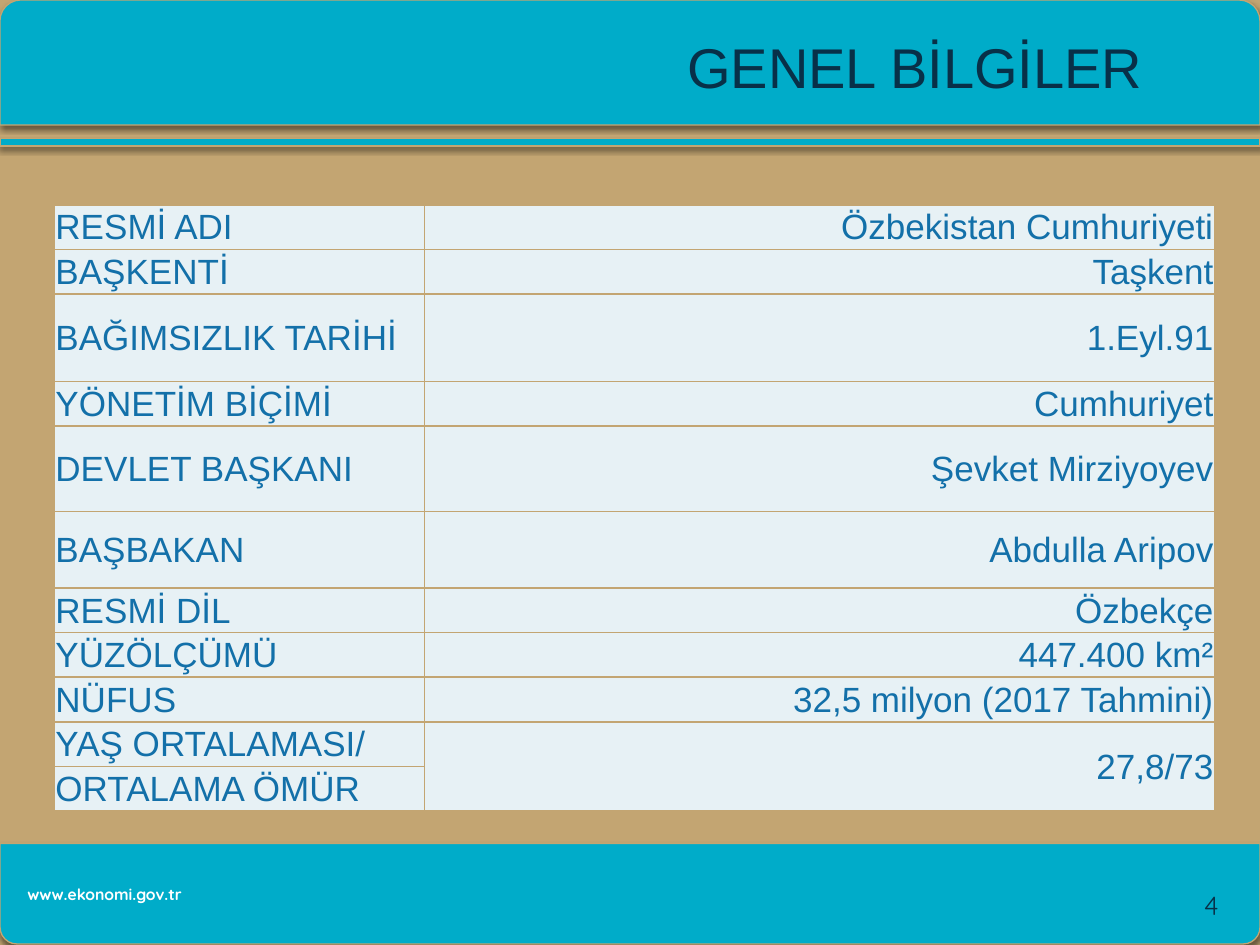
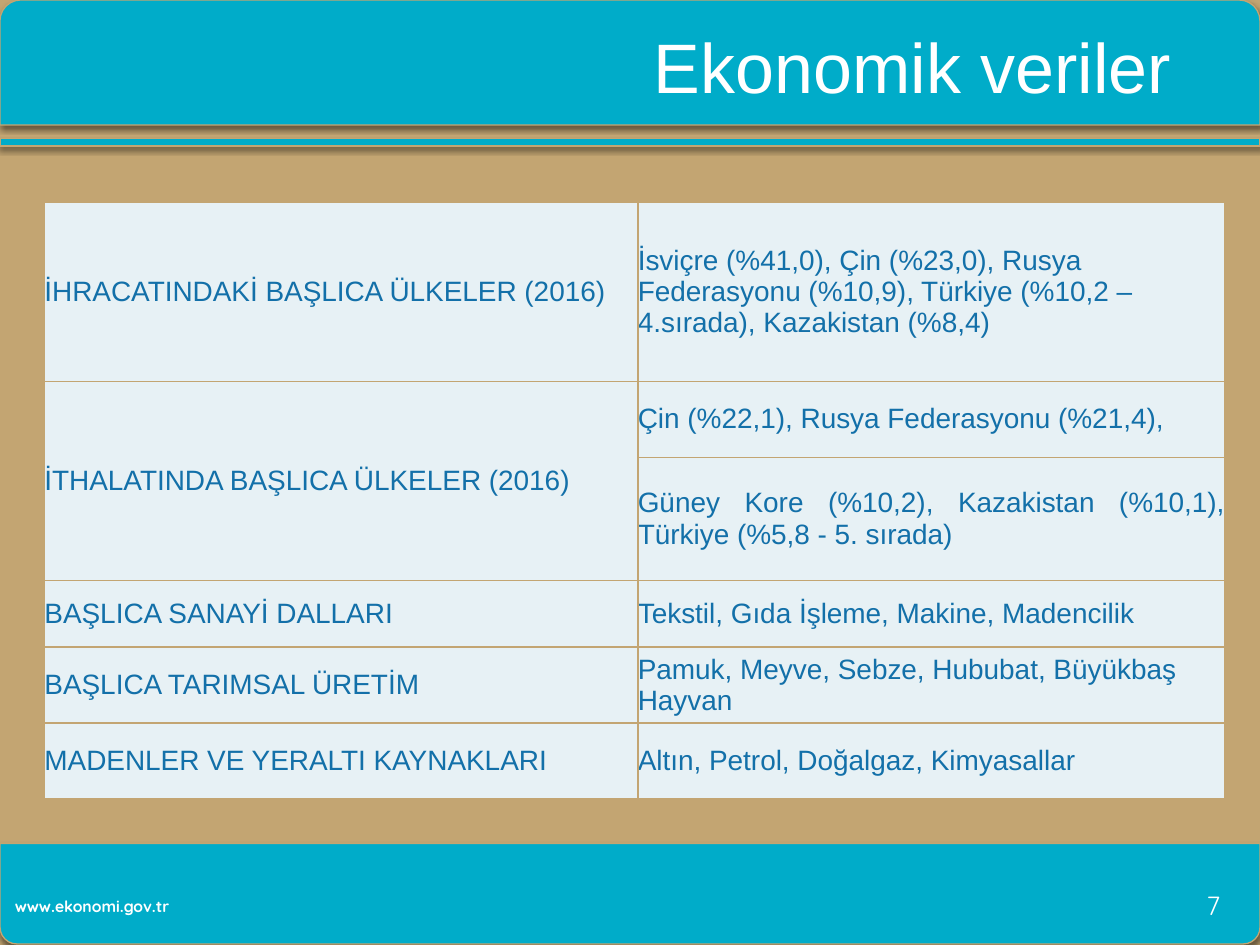
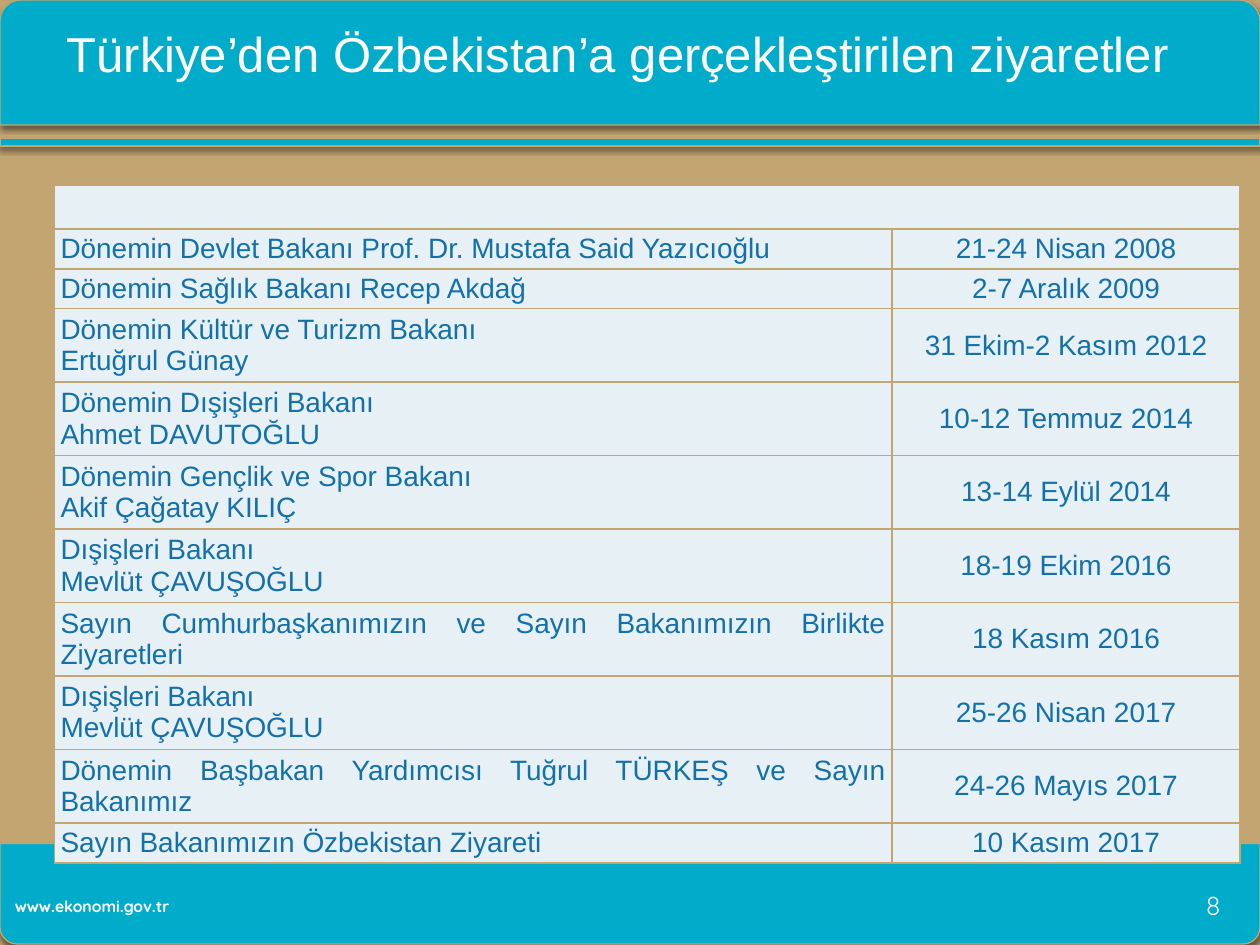
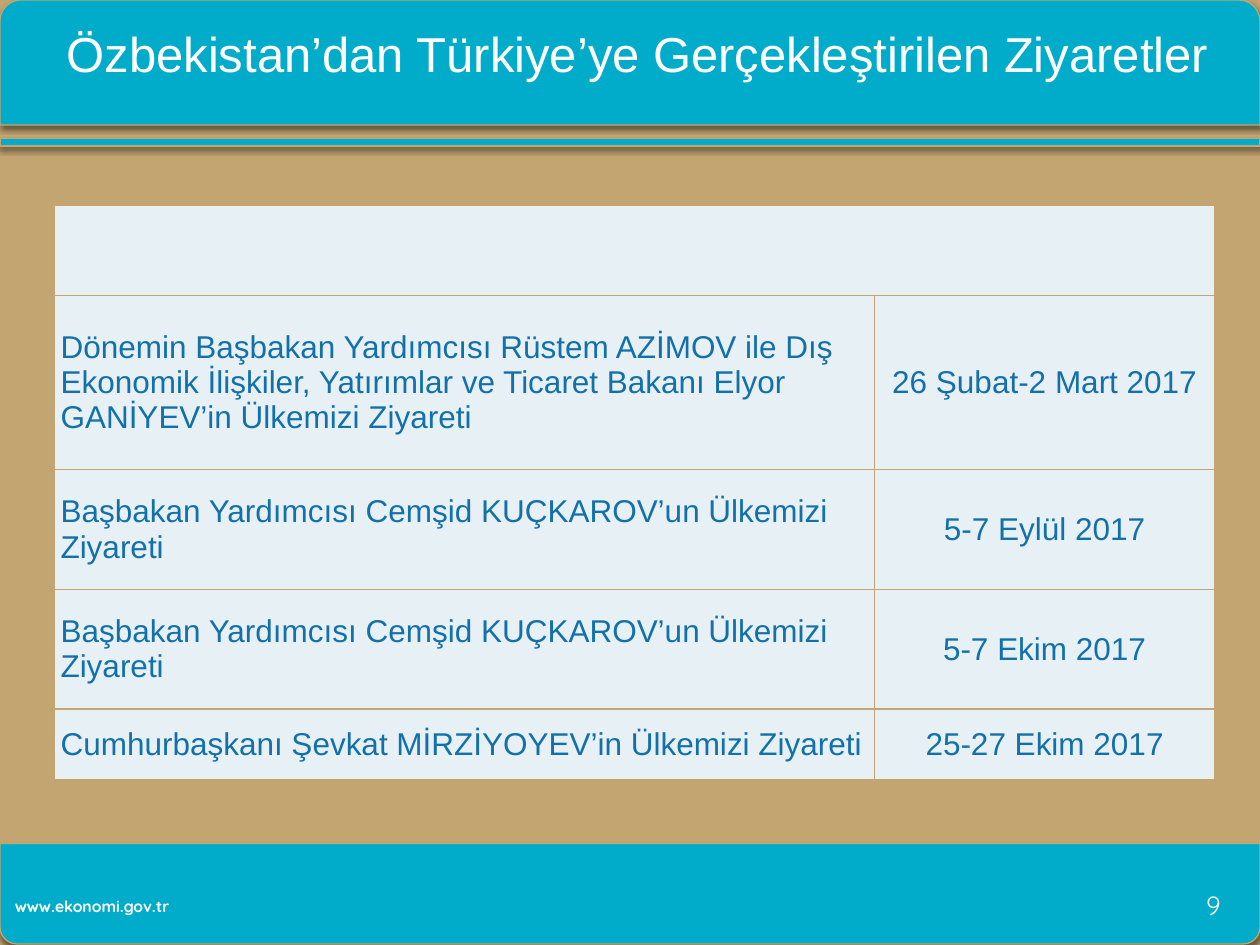
from dataclasses import dataclass, field
from typing import NamedTuple

from pptx import Presentation
from pptx.dml.color import RGBColor
from pptx.enum.shapes import MSO_SHAPE
from pptx.enum.text import MSO_ANCHOR, MSO_AUTO_SIZE, PP_ALIGN
from pptx.oxml.ns import qn
from pptx.oxml.xmlchemy import OxmlElement
from pptx.util import Pt

LEFT, CENTER, RIGHT, JUSTIFY = PP_ALIGN.LEFT, PP_ALIGN.CENTER, PP_ALIGN.RIGHT, PP_ALIGN.JUSTIFY
TOP, MIDDLE = MSO_ANCHOR.TOP, MSO_ANCHOR.MIDDLE
ROUNDED_TOP, RECTANGLE = MSO_SHAPE.ROUND_2_SAME_RECTANGLE, MSO_SHAPE.RECTANGLE
GROW_TO_TEXT = MSO_AUTO_SIZE.SHAPE_TO_FIT_TEXT

COLORS = {
    "sand": "C3A572",
    "turquoise": "00ACC9",
    "navy": "083048",
    "white": "FFFFFF",
    "cell": "E7F1F5",
    "blue": "1370A9",
    "shadow": "000000",
}
BODY_FONT, FOOTER_FONT = "Arial", "Quicksand"
WEBSITE = "www.ekonomi.gov.tr"


class Area(NamedTuple):
    left: float
    top: float
    width: float
    height: float


class Insets(NamedTuple):
    left: float
    top: float
    right: float
    bottom: float


class Band(NamedTuple):
    preset: int
    area: Area
    rotation: int = 0


class Title(NamedTuple):
    text: str
    area: Area
    size: float
    color: str = "white"
    align: int = LEFT


class Merge(NamedTuple):
    first: tuple[int, int]
    last: tuple[int, int]


@dataclass(frozen=True)
class Grid:
    left: float
    top: float
    widths: list[float]
    heights: list[float]
    size: float
    aligns: tuple[int, int]
    merge: Merge
    rows: list[tuple[str, str]]
    insets: Insets = Insets(3.6, 1.8, 3.6, 1.8)
    exceptions: dict[tuple[int, int], int] = field(default_factory=dict)


@dataclass(frozen=True)
class PageContent:
    number: str
    title: Title
    grid: Grid
    number_color: str = "white"
    number_area: Area = Area(677.5, 499, 31.7, 36.7)
    website_area: Area = Area(1.4, 506.2, 228.2, 23.8)


BANDS = [
    Band(ROUNDED_TOP, Area(0, 481.9, 720, 57.5), 180),
    Band(ROUNDED_TOP, Area(0, 0, 720, 71.4)),
    Band(RECTANGLE, Area(0, 79.3, 720, 4.2)),
]
VISITS_TITLE_AREA = Area(31, 10.1, 677.5, 41)
HEADER_MERGE = Merge((0, 0), (0, 1))

PAGES = [
    PageContent(
        number="4",
        number_color="navy",
        number_area=Area(675.4, 499, 33.8, 36.7),
        website_area=Area(8.6, 499, 228.2, 23.8),
        title=Title("GENEL BİLGİLER", Area(23.8, 15.1, 636.5, 46), 32, "navy", RIGHT),
        grid=Grid(
            left=31, top=117, widths=[211.7, 451.4],
            heights=[25.5] * 2 + [50, 25.5, 49, 43.6] + [25.5] * 5,
            size=20, aligns=(LEFT, RIGHT), merge=Merge((9, 1), (10, 1)),
            insets=Insets(0.7, 0.7, 0.7, 0),
            rows=[
                ("RESMİ ADI", "Özbekistan Cumhuriyeti"),
                ("BAŞKENTİ", "Taşkent"),
                ("BAĞIMSIZLIK TARİHİ", "1.Eyl.91"),
                ("YÖNETİM BİÇİMİ", "Cumhuriyet"),
                ("DEVLET BAŞKANI", "Şevket Mirziyoyev"),
                ("BAŞBAKAN", "Abdulla Aripov"),
                ("RESMİ DİL", "Özbekçe"),
                ("YÜZÖLÇÜMÜ", "447.400 km²"),
                ("NÜFUS", "32,5 milyon (2017 Tahmini)"),
                ("YAŞ ORTALAMASI/", "27,8/73"),
                ("ORTALAMA ÖMÜR", ""),
            ],
        ),
    ),
    PageContent(
        number="7",
        title=Title("Ekonomik veriler", Area(194.4, 10.1, 481.7, 55.4), 40, align=RIGHT),
        grid=Grid(
            left=25.4, top=115.3, widths=[339.1, 335.5],
            heights=[102.6, 43.4, 70.4, 38, 43.4, 43.4],
            size=16, aligns=(LEFT, LEFT), merge=Merge((1, 0), (2, 0)),
            insets=Insets(0, 0, 0, 0), exceptions={(2, 1): JUSTIFY},
            rows=[
                (
                    "İHRACATINDAKİ BAŞLICA ÜLKELER (2016)",
                    "İsviçre (%41,0), Çin (%23,0), Rusya Federasyonu (%10,9), "
                    "Türkiye (%10,2 – 4.sırada), Kazakistan (%8,4)",
                ),
                ("İTHALATINDA BAŞLICA ÜLKELER (2016)", "Çin (%22,1), Rusya Federasyonu (%21,4),"),
                ("", "Güney Kore (%10,2), Kazakistan (%10,1), Türkiye (%5,8 - 5. sırada)"),
                ("BAŞLICA SANAYİ DALLARI", "Tekstil, Gıda İşleme, Makine, Madencilik"),
                ("BAŞLICA TARIMSAL ÜRETİM", "Pamuk, Meyve, Sebze, Hububat, Büyükbaş Hayvan"),
                ("MADENLER VE YERALTI KAYNAKLARI", "Altın, Petrol, Doğalgaz, Kimyasallar"),
            ],
        ),
    ),
    PageContent(
        number="8",
        title=Title("Türkiye’den Özbekistan’a gerçekleştirilen ziyaretler", VISITS_TITLE_AREA, 28),
        grid=Grid(
            left=31, top=105.6, widths=[478.8, 198.7],
            heights=[25, 22, 22] + [41.2] * 7 + [22],
            size=16, aligns=(JUSTIFY, CENTER), merge=HEADER_MERGE,
            rows=[
                ("", ""),
                ("Dönemin Devlet Bakanı Prof. Dr. Mustafa Said Yazıcıoğlu", "21-24 Nisan 2008"),
                ("Dönemin Sağlık Bakanı Recep Akdağ", "2-7 Aralık 2009"),
                ("Dönemin Kültür ve Turizm Bakanı\nErtuğrul Günay", "31 Ekim-2 Kasım 2012"),
                ("Dönemin Dışişleri Bakanı\nAhmet DAVUTOĞLU", "10-12 Temmuz 2014"),
                ("Dönemin Gençlik ve Spor Bakanı\nAkif Çağatay KILIÇ", "13-14 Eylül 2014"),
                ("Dışişleri Bakanı\nMevlüt ÇAVUŞOĞLU", "18-19 Ekim 2016"),
                (
                    "Sayın Cumhurbaşkanımızın ve Sayın Bakanımızın Birlikte Ziyaretleri",
                    "18 Kasım 2016",
                ),
                ("Dışişleri Bakanı\nMevlüt ÇAVUŞOĞLU", "25-26 Nisan 2017"),
                (
                    "Dönemin Başbakan Yardımcısı Tuğrul TÜRKEŞ ve Sayın Bakanımız",
                    "24-26 Mayıs 2017",
                ),
                ("Sayın Bakanımızın Özbekistan Ziyareti", "10 Kasım 2017"),
            ],
        ),
    ),
    PageContent(
        number="9",
        title=Title("Özbekistan’dan Türkiye’ye Gerçekleştirilen Ziyaretler", VISITS_TITLE_AREA, 28),
        grid=Grid(
            left=31, top=117, widths=[468.7, 194.4],
            heights=[52, 99.4, 68.4, 68.4, 40.3],
            size=18, aligns=(LEFT, CENTER), merge=HEADER_MERGE,
            rows=[
                ("", ""),
                (
                    "Dönemin Başbakan Yardımcısı Rüstem AZİMOV ile Dış Ekonomik İlişkiler, "
                    "Yatırımlar ve Ticaret Bakanı Elyor GANİYEV’in Ülkemizi Ziyareti",
                    "26 Şubat-2 Mart 2017",
                ),
                ("Başbakan Yardımcısı Cemşid KUÇKAROV’un Ülkemizi Ziyareti", "5-7 Eylül 2017"),
                ("Başbakan Yardımcısı Cemşid KUÇKAROV’un Ülkemizi Ziyareti", "5-7 Ekim 2017"),
                ("Cumhurbaşkanı Şevkat MİRZİYOYEV’in Ülkemizi Ziyareti", "25-27 Ekim 2017"),
            ],
        ),
    ),
]


def rgb(name: str) -> RGBColor:
    return RGBColor.from_string(COLORS[name])


def points(values) -> list[Pt]:
    return [Pt(value) for value in values]


def add_color_element(parent, name: str):
    color = OxmlElement("a:srgbClr")
    color.set("val", COLORS[name])
    parent.append(color)
    return color


def write_text(frame, text: str, *, size: float, color: str, font: str = BODY_FONT,
               align: int = LEFT, bold: bool = False) -> None:
    for index, line in enumerate(text.split("\n")):
        paragraph = frame.add_paragraph() if index else frame.paragraphs[0]
        paragraph.alignment = align
        span = paragraph.add_run()
        span.text = line
        span.font.name = font
        span.font.size = Pt(size)
        span.font.bold = bold
        span.font.color.rgb = rgb(color)


def add_text(page, text: str, area: Area, *, anchor: int = MIDDLE, grow: bool = False,
             **text_format) -> None:
    frame = page.shapes.add_textbox(*points(area)).text_frame
    frame.word_wrap = True
    frame.vertical_anchor = anchor
    if grow:
        frame.auto_size = GROW_TO_TEXT
    write_text(frame, text, **text_format)


def add_shadow(shape) -> None:
    shape.shadow.inherit = False
    shadow = OxmlElement("a:outerShdw")
    settings = {"blurRad": Pt(3), "dist": Pt(2), "dir": 90 * 60000, "rotWithShape": 0}
    for name, value in settings.items():
        shadow.set(name, str(int(value)))
    alpha = OxmlElement("a:alpha")
    alpha.set("val", "45000")
    add_color_element(shadow, "shadow").append(alpha)
    shape.element.spPr.find(qn("a:effectLst")).append(shadow)


def add_band(page, band: Band) -> None:
    shape = page.shapes.add_shape(band.preset, *points(band.area))
    shape.rotation = band.rotation
    shape.fill.solid()
    shape.fill.fore_color.rgb = rgb("turquoise")
    shape.line.color.rgb = rgb("sand")
    shape.line.width = Pt(0.75)
    add_shadow(shape)


def add_borders(cell) -> None:
    properties = cell._tc.get_or_add_tcPr()
    for index, side in enumerate(("a:lnL", "a:lnR", "a:lnT", "a:lnB")):
        line = OxmlElement(side)
        line.set("w", str(int(Pt(1))))
        fill = OxmlElement("a:solidFill")
        add_color_element(fill, "sand")
        line.append(fill)
        properties.insert(index, line)


def style_cell(cell, insets: Insets) -> None:
    cell.fill.solid()
    cell.fill.fore_color.rgb = rgb("cell")
    cell.vertical_anchor = MIDDLE
    cell.margin_left, cell.margin_top, cell.margin_right, cell.margin_bottom = points(insets)
    add_borders(cell)


def add_grid(page, grid: Grid) -> None:
    area = Area(grid.left, grid.top, sum(grid.widths), sum(grid.heights))
    table = page.shapes.add_table(len(grid.rows), len(grid.widths), *points(area)).table
    table.first_row = table.horz_banding = False
    for column, width in zip(table.columns, grid.widths):
        column.width = Pt(width)
    for row, height in zip(table.rows, grid.heights):
        row.height = Pt(height)
    for row_index, texts in enumerate(grid.rows):
        for column_index, text in enumerate(texts):
            cell = table.cell(row_index, column_index)
            style_cell(cell, grid.insets)
            if text:
                align = grid.exceptions.get((row_index, column_index), grid.aligns[column_index])
                write_text(cell.text_frame, text, size=grid.size, color="blue", align=align)
    table.cell(*grid.merge.first).merge(table.cell(*grid.merge.last))


def add_page(deck, content: PageContent) -> None:
    page = deck.slides.add_slide(deck.slide_layouts[6])
    for band in BANDS:
        add_band(page, band)
    add_text(page, WEBSITE, content.website_area, size=9, color="white",
             font=FOOTER_FONT, bold=True)
    add_text(page, content.number, content.number_area, size=15, color=content.number_color,
             font=FOOTER_FONT, align=CENTER)
    add_grid(page, content.grid)
    title = content.title
    add_text(page, title.text, title.area, anchor=TOP, grow=True, size=title.size,
             color=title.color, align=title.align)


def main() -> None:
    deck = Presentation()
    deck.slide_width, deck.slide_height = Pt(720), Pt(540)
    background = deck.slide_master.background.fill
    background.solid()
    background.fore_color.rgb = rgb("sand")
    for content in PAGES:
        add_page(deck, content)
    deck.save("out.pptx")


if __name__ == "__main__":
    main()
